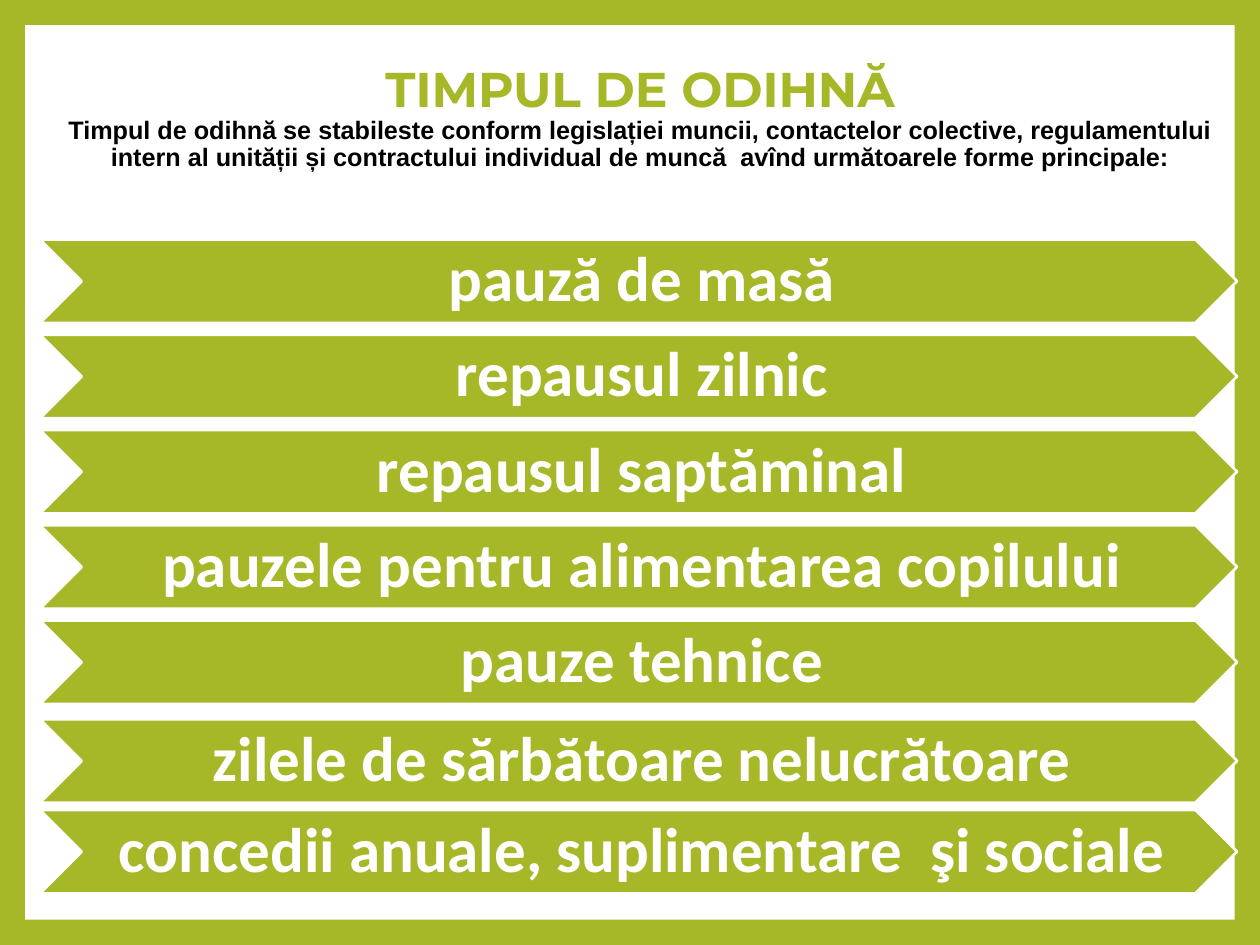
from dataclasses import dataclass

from pptx import Presentation
from pptx.dml.color import RGBColor
from pptx.enum.shapes import MSO_SHAPE
from pptx.enum.text import MSO_ANCHOR, MSO_AUTO_SIZE, PP_ALIGN
from pptx.shapes.autoshape import Shape
from pptx.slide import Slide
from pptx.util import Cm, Pt

CHEVRON = MSO_SHAPE.CHEVRON
RECTANGLE = MSO_SHAPE.RECTANGLE
MIDDLE = MSO_ANCHOR.MIDDLE
CENTER = PP_ALIGN.CENTER
NO_AUTOFIT = MSO_AUTO_SIZE.NONE

COLORS = {"green": "A6B727", "white": "FFFFFF", "black": "000000"}

TITLE_ONLY = 5
BAND_LEFT, BAND_WIDTH, BAND_HEIGHT = 0.81, 24.13, 1.68
FIRST_TOP, BAND_STEP = 4.83, 1.92


@dataclass
class TextStyle:
    font: str
    size: float
    color: str


@dataclass
class RestForm:
    label: str
    top: float


HEADING = TextStyle("Montserrat", 27.9, "green")
INTRO = TextStyle("Arial", 14.4, "black")
BAND_LABEL = TextStyle("Calibri", 36, "white")

TITLE_LINES = [
    ("TIMPUL DE ODIHNĂ", HEADING),
    ("Timpul de odihnă se stabileste conform legislației muncii, contactelor colective, "
     "regulamentului intern al unității și contractului individual de muncă  avînd "
     "următoarele forme principale:", INTRO),
]

EVEN_LABELS = [
    "pauză de masă",
    "repausul zilnic",
    "repausul saptăminal",
    "pauzele pentru alimentarea copilului",
    "pauze tehnice",
]
REST_FORMS = [
    RestForm(label, FIRST_TOP + row * BAND_STEP) for row, label in enumerate(EVEN_LABELS)
] + [
    RestForm("zilele de sărbătoare nelucrătoare", 14.5),
    RestForm("concedii anuale, suplimentare  şi sociale", 16.33),
]


def rgb(name: str) -> RGBColor:
    return RGBColor.from_string(COLORS[name])


def write_lines(shape: Shape, lines: list[tuple[str, TextStyle]]) -> None:
    frame = shape.text_frame
    frame.word_wrap = True
    frame.auto_size = NO_AUTOFIT
    frame.vertical_anchor = MIDDLE
    for index, (text, style) in enumerate(lines):
        paragraph = frame.add_paragraph() if index else frame.paragraphs[0]
        paragraph.alignment = CENTER
        paragraph.line_spacing = 0.9
        paragraph.space_before = Pt(0)
        run = paragraph.add_run()
        run.text = text
        run.font.name = style.font
        run.font.size = Pt(style.size)
        run.font.bold = True
        run.font.color.rgb = rgb(style.color)


def draw_panel(slide: Slide) -> None:
    panel = slide.shapes.add_shape(RECTANGLE, Cm(0.51), Cm(0.51), Cm(24.38), Cm(18.03))
    panel.shadow.inherit = False
    panel.fill.solid()
    panel.fill.fore_color.rgb = rgb("white")
    panel.line.fill.background()
    slide.shapes.element.insert(2, panel.element)


def draw_title(slide: Slide) -> None:
    title = slide.shapes.title
    title.left, title.top, title.width, title.height = Cm(0.84), Cm(0.53), Cm(24.13), Cm(4.6)
    write_lines(title, TITLE_LINES)
    title.text_frame.margin_bottom = Cm(1)


def draw_band(slide: Slide, form: RestForm) -> None:
    band = slide.shapes.add_shape(
        CHEVRON, Cm(BAND_LEFT), Cm(form.top), Cm(BAND_WIDTH), Cm(BAND_HEIGHT))
    band.shadow.inherit = False
    band.fill.solid()
    band.fill.fore_color.rgb = rgb("green")
    band.line.color.rgb = rgb("white")
    band.line.width = Pt(1.5)
    write_lines(band, [(form.label, BAND_LABEL)])
    frame = band.text_frame
    frame.margin_left, frame.margin_right = Cm(0.13), Cm(0)
    frame.margin_top = frame.margin_bottom = Cm(0.08)


def main() -> None:
    """Build the slide on forms of rest time."""
    deck = Presentation()
    deck.slide_width, deck.slide_height = Cm(25.4), Cm(19.05)
    slide = deck.slides.add_slide(deck.slide_layouts[TITLE_ONLY])
    slide.background.fill.solid()
    slide.background.fill.fore_color.rgb = rgb("green")
    draw_panel(slide)
    draw_title(slide)
    for form in REST_FORMS:
        draw_band(slide, form)
    deck.save("out.pptx")


if __name__ == "__main__":
    main()
